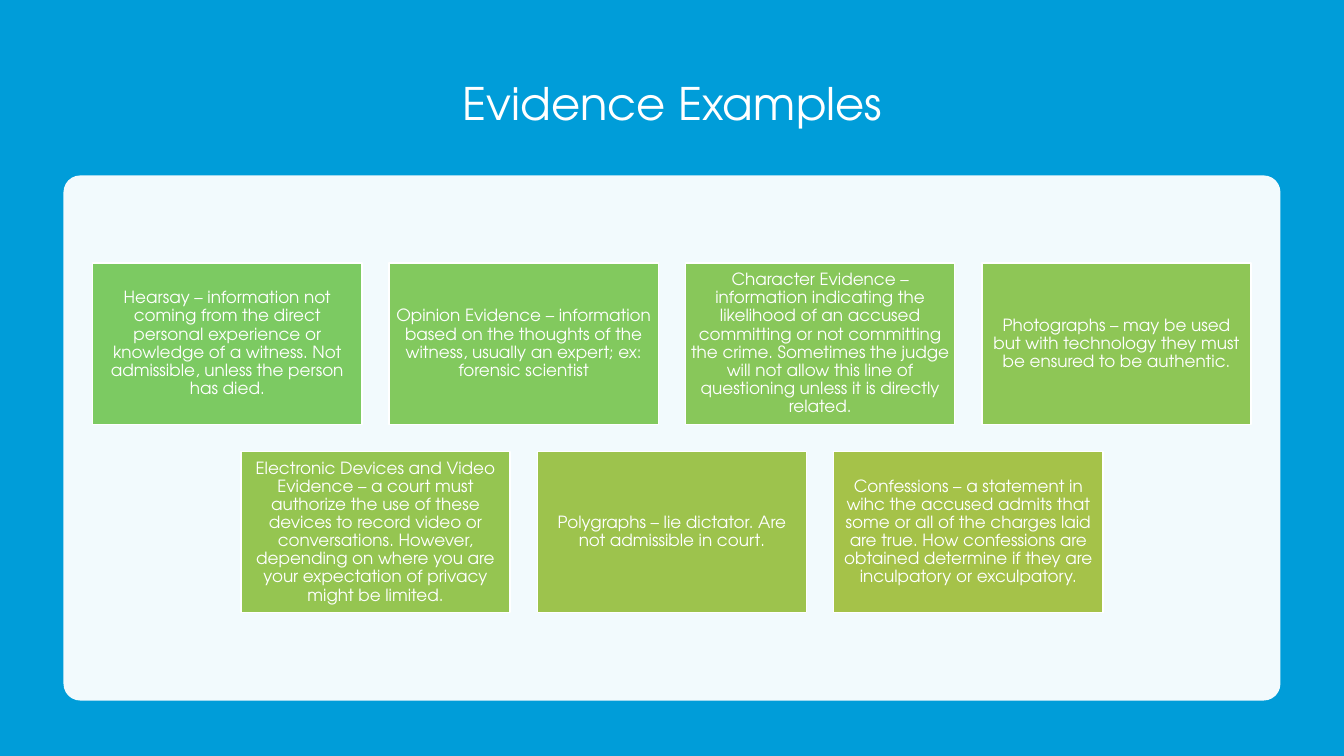
from lxml.etree import SubElement
from pptx import Presentation
from pptx.dml.color import RGBColor
from pptx.enum.shapes import MSO_SHAPE
from pptx.enum.text import MSO_ANCHOR, PP_ALIGN
from pptx.oxml.ns import qn
from pptx.util import Inches, Pt

BLUE = RGBColor(0x00, 0x9D, 0xD9)
WHITE = RGBColor(0xFF, 0xFF, 0xFF)
GREENS = [
    RGBColor(0x7C, 0xCA, 0x62),
    RGBColor(0x82, 0xC9, 0x5E),
    RGBColor(0x88, 0xC7, 0x5A),
    RGBColor(0x8E, 0xC6, 0x56),
    RGBColor(0x95, 0xC5, 0x51),
    RGBColor(0x9D, 0xC3, 0x4D),
    RGBColor(0xA5, 0xC2, 0x49),
]
SLIDE_WIDTH, SLIDE_HEIGHT = 13.33, 7.5
CARD_WIDTH, CARD_HEIGHT, CARD_GAP = 2.67, 1.6, 0.27
CARDS_TOP = 2.61
EVIDENCE_ROWS = [
    [
        "Hearsay – information not coming from the direct personal experience or "
        "knowledge of a witness. Not admissible, unless the person has died.",
        "Opinion Evidence – information based on the thoughts of the witness, "
        "usually an expert; ex: forensic scientist",
        "Character Evidence – information indicating the likelihood of an accused "
        "committing or not committing the crime. Sometimes the judge will not allow "
        "this line of questioning unless it is directly related.",
        "Photographs – may be used but with technology they must be ensured to be "
        "authentic.",
    ],
    [
        "Electronic Devices and Video Evidence – a court must authorize the use of "
        "these devices to record video or conversations. However, depending on where "
        "you are your expectation of privacy might be limited.",
        "Polygraphs – lie dictator. Are not admissible in court.",
        "Confessions – a statement in wihc the accused admits that some or all of the "
        "charges laid are true. How confessions are obtained determine if they are "
        "inculpatory or exculpatory.",
    ],
]


class EvidenceSlide:
    """Holds the slide and its style, and draws each kind of element."""

    font_name = "TeX Gyre Adventor"

    def __init__(self, presentation):
        self.slide = presentation.slides.add_slide(presentation.slide_layouts[6])

    def panel(self, left, top, width, height, color, kind=MSO_SHAPE.RECTANGLE):
        shape = self.slide.shapes.add_shape(
            kind, Inches(left), Inches(top), Inches(width), Inches(height))
        shape.shadow.inherit = False
        shape.fill.solid()
        shape.fill.fore_color.rgb = color
        shape.line.fill.background()
        return shape

    def rounded_panel(self, left, top, width, height, color, corner, opacity):
        shape = self.panel(left, top, width, height, color, MSO_SHAPE.ROUNDED_RECTANGLE)
        shape.adjustments[0] = corner
        solid_fill = shape.element.spPr.find(qn("a:solidFill"))
        SubElement(solid_fill[0], qn("a:alpha")).set("val", str(opacity * 1000))

    def centered_text(self, shape, text, size, margin):
        frame = shape.text_frame
        frame.word_wrap = True
        frame.vertical_anchor = MSO_ANCHOR.MIDDLE
        frame.margin_left = frame.margin_right = Inches(margin)
        frame.margin_top = frame.margin_bottom = Inches(0.05)
        paragraph = frame.paragraphs[0]
        paragraph.alignment = PP_ALIGN.CENTER
        paragraph.line_spacing = 0.9
        run = paragraph.add_run()
        run.text = text
        run.font.name = self.font_name
        run.font.size = Pt(size)
        run.font.color.rgb = WHITE

    def title(self, left, top, width, height, text):
        box = self.slide.shapes.add_textbox(
            Inches(left), Inches(top), Inches(width), Inches(height))
        self.centered_text(box, text, 32, 0.1)

    def card(self, left, top, color, text):
        shape = self.panel(left, top, CARD_WIDTH, CARD_HEIGHT, color)
        shape.line.color.rgb = WHITE
        shape.line.width = Pt(1)
        self.centered_text(shape, text, 12, 0.05)


def main():
    presentation = Presentation()
    presentation.slide_width = Inches(SLIDE_WIDTH)
    presentation.slide_height = Inches(SLIDE_HEIGHT)
    evidence = EvidenceSlide(presentation)
    evidence.panel(0, 0, SLIDE_WIDTH, SLIDE_HEIGHT, BLUE)
    evidence.title(0.92, 0.5, 11.5, 1.1, "Evidence Examples")
    evidence.rounded_panel(0.63, 1.74, 12.07, 5.21, WHITE, 0.032, 95)
    colors = iter(GREENS)
    for row, texts in enumerate(EVIDENCE_ROWS):
        row_width = len(texts) * (CARD_WIDTH + CARD_GAP) - CARD_GAP
        row_left = (SLIDE_WIDTH - row_width) / 2
        top = CARDS_TOP + row * (CARD_HEIGHT + CARD_GAP)
        for column, text in enumerate(texts):
            left = row_left + column * (CARD_WIDTH + CARD_GAP)
            evidence.card(left, top, next(colors), text)
    presentation.save("out.pptx")


if __name__ == "__main__":
    main()
